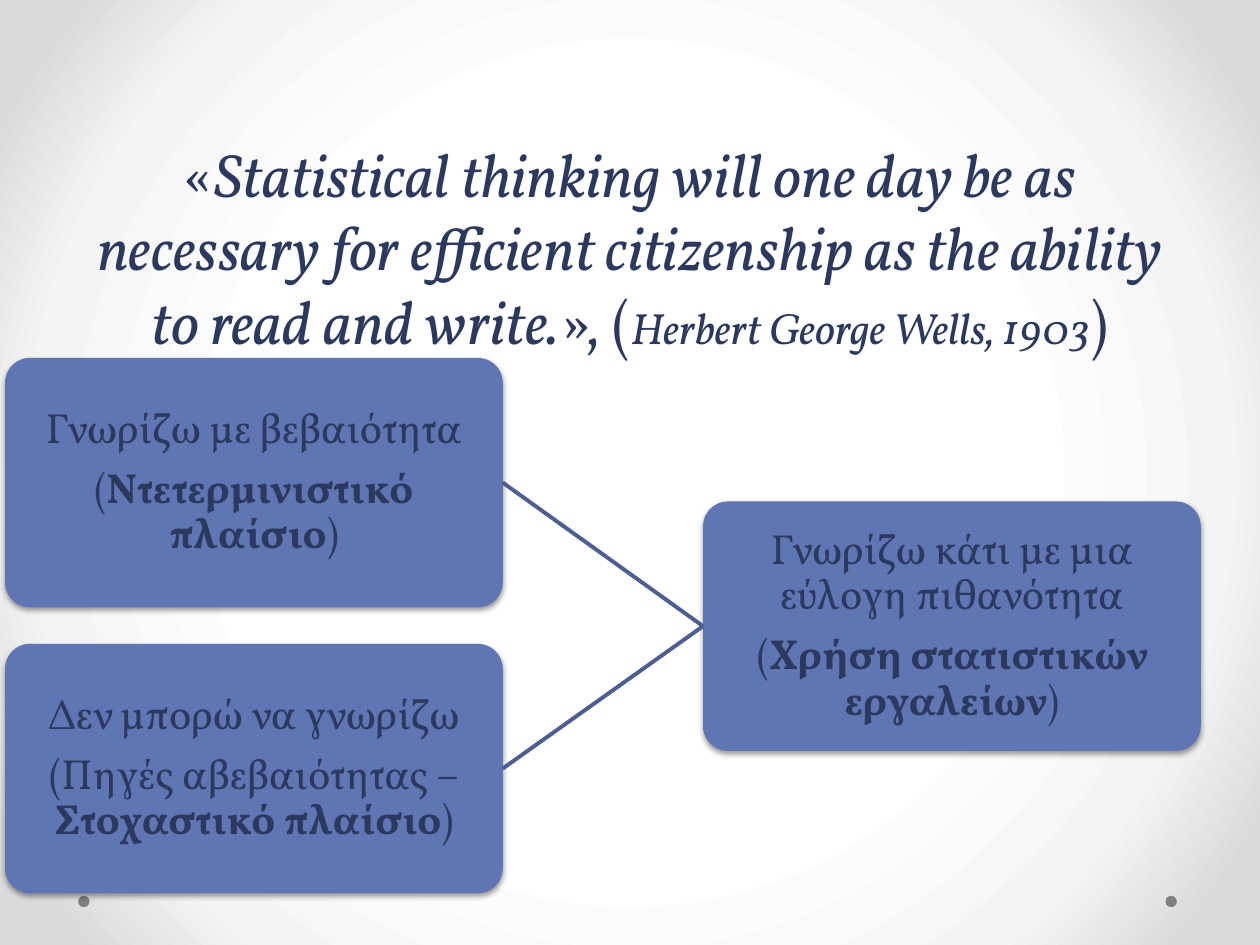
from lxml import etree
from pptx import Presentation
from pptx.dml.color import RGBColor
from pptx.enum import shapes, text
from pptx.oxml import parse_xml
from pptx.oxml.ns import qn
from pptx.util import Inches, Pt

FONT = "Vollkorn"
INK, BOX, LINE, DOT = "2C395E", "6076B4", "4D5E90", "808080"
BOX_W, BOX_H = 3.95, 1.98
NS = 'xmlns:a="http://schemas.openxmlformats.org/drawingml/2006/main"'


def color(value):
    return RGBColor.from_string(value)


def set_background(slide, stops):
    """Radial gradient from the slide's centre; stops are (percent, colour)."""
    slide.background.fill.gradient()
    old = slide.background._cSld.find(".//" + qn("a:gradFill"))
    gs = "".join(f'<a:gs pos="{pos * 1000}"><a:srgbClr val="{c}"/></a:gs>'
                 for pos, c in stops)
    new = parse_xml(
        f'<a:gradFill {NS} rotWithShape="1"><a:gsLst>{gs}</a:gsLst>'
        '<a:path path="circle"><a:fillToRect l="50000" t="50000" r="50000" b="50000"/>'
        '</a:path></a:gradFill>')
    old.getparent().replace(old, new)


def add_filled(slide, kind, left, top, width, height, fill):
    sp = slide.shapes.add_shape(kind, Inches(left), Inches(top),
                                Inches(width), Inches(height))
    sp.shadow.inherit = False
    sp.fill.solid()
    sp.fill.fore_color.rgb = color(fill)
    sp.line.fill.background()
    return sp


def add_shadow(sp):
    effects = sp._element.spPr.find(qn("a:effectLst"))
    effects.append(parse_xml(
        f'<a:outerShdw {NS} blurRad="{Pt(3.1)}" dist="{Pt(1.6)}" dir="5400000" '
        'rotWithShape="0"><a:srgbClr val="000000"><a:alpha val="38000"/>'
        '</a:srgbClr></a:outerShdw>'))


def format_paragraph(p, size):
    p.alignment = text.PP_ALIGN.CENTER
    p.font.name, p.font.size = FONT, Pt(size)
    p.font.color.rgb = color(INK)


def add_title(slide, runs):
    """Runs are (text, size, italic)."""
    sp = slide.shapes.add_textbox(Inches(0.5), Inches(0.94), Inches(9), Inches(1.94))
    tf = sp.text_frame
    tf.word_wrap = True
    tf.vertical_anchor = text.MSO_ANCHOR.BOTTOM
    p = tf.paragraphs[0]
    format_paragraph(p, 35)
    for words, size, italic in runs:
        r = p.add_run()
        r.text = words
        r.font.size, r.font.italic = Pt(size), italic


def add_box(slide, left, top, paragraphs):
    """Each paragraph is a list of (text, bold)."""
    sp = add_filled(slide, shapes.MSO_SHAPE.ROUNDED_RECTANGLE,
                    left, top, BOX_W, BOX_H, BOX)
    sp.adjustments[0] = 0.1
    add_shadow(sp)
    tf = sp.text_frame
    tf.word_wrap = True
    tf.vertical_anchor = text.MSO_ANCHOR.MIDDLE
    # Inset includes the room taken by the rounded corners
    tf.margin_left = tf.margin_right = tf.margin_top = tf.margin_bottom = Inches(0.02)
    for i, runs in enumerate(paragraphs):
        p = tf.paragraphs[0] if i == 0 else tf.add_paragraph()
        format_paragraph(p, 24)
        p.line_spacing, p.space_after = 0.9, Pt(8.4)
        for words, bold in runs:
            r = p.add_run()
            r.text, r.font.bold = words, bold
    return sp


def join(slide, start, end):
    """Line from the left side of start to the right side of end."""
    line = slide.shapes.add_connector(shapes.MSO_CONNECTOR.STRAIGHT, 0, 0, 0, 0)
    line.begin_connect(start, 1)
    line.end_connect(end, 3)
    line.line.color.rgb = color(LINE)
    line.line.width = Pt(2.25)
    etree.SubElement(line._element.spPr, qn("a:effectLst"))


def main():
    prs = Presentation()
    prs.slide_width, prs.slide_height = Inches(10), Inches(7.5)
    slide = prs.slides.add_slide(prs.slide_layouts[6])

    # Background and corner dots
    set_background(slide, [(50, "FFFFFF"), (76, "F4F4F4"), (92, "DADADA")])
    for left in (9.25, 0.62):
        add_filled(slide, shapes.MSO_SHAPE.OVAL, left, 7.11, 0.09, 0.09, DOT)

    # Quotation
    add_title(slide, [
        ("«", 35, False),
        ("Statistical thinking will one day be as necessary for efficient "
         "citizenship as the ability to read and write.", 35, True),
        ("», (", 35, False),
        ("Herbert George Wells, 1903", 25, True),
        (")", 35, False)])

    # Result on the right, its two sources on the left
    result = add_box(slide, 5.58, 3.98, [
        [("Γνωρίζω κάτι με μια εύλογη πιθανότητα", False)],
        [("(", False), ("Χρήση στατιστικών εργαλείων", True), (")", False)]])
    sources = [
        [[("Γνωρίζω με βεβαιότητα", False)],
         [("(", False), ("Ντετερμινιστικό πλαίσιο", True), (")", False)]],
        [[("Δεν μπορώ να γνωρίζω", False)],
         [("(Πηγές αβεβαιότητας – ", False), ("Στοχαστικό πλαίσιο", True),
          (")", False)]]]
    for i, paragraphs in enumerate(sources):
        join(slide, result, add_box(slide, 0.04, 2.84 + i * 2.27, paragraphs))

    prs.save("out.pptx")


if __name__ == "__main__":
    main()
